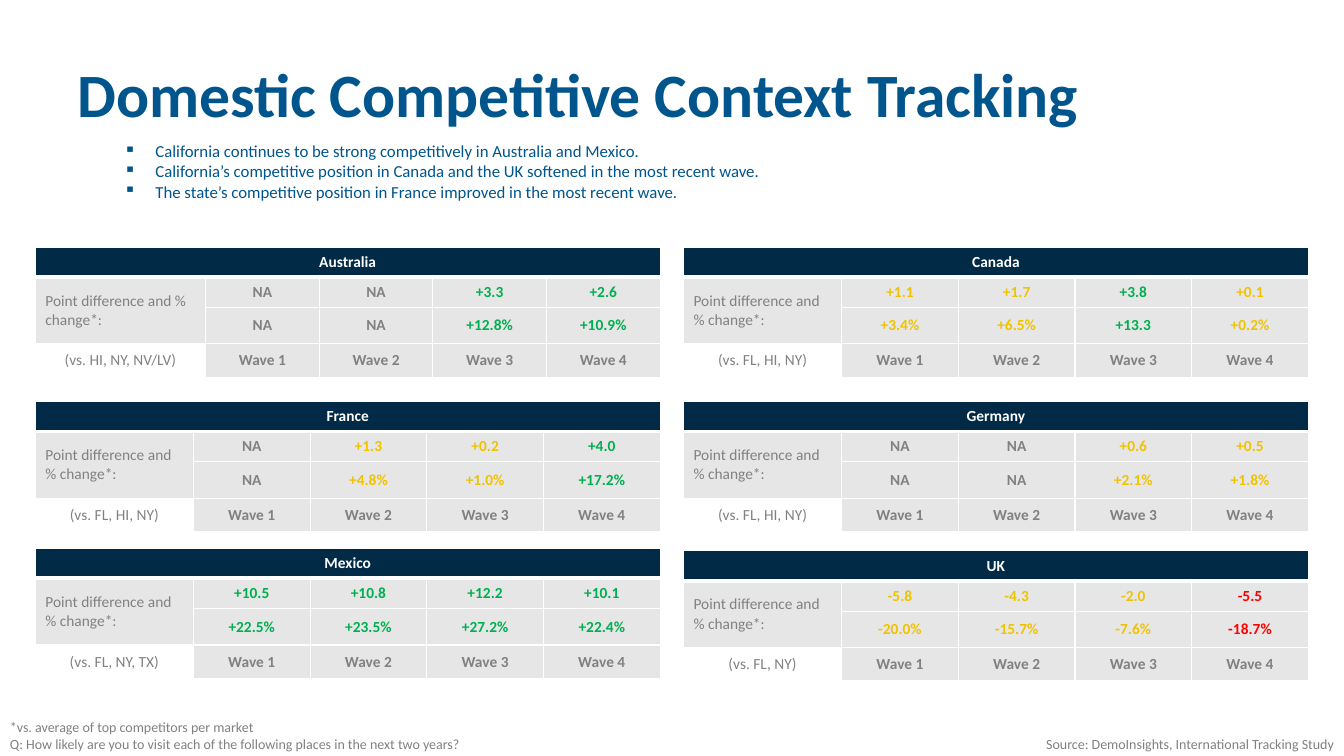
from dataclasses import dataclass

from lxml.etree import SubElement
from pptx import Presentation
from pptx.dml.color import RGBColor
from pptx.enum.text import MSO_ANCHOR, PP_ALIGN
from pptx.oxml.ns import qn
from pptx.slide import Slide
from pptx.table import _Cell
from pptx.text.text import TextFrame, _Paragraph
from pptx.util import Pt


@dataclass(frozen=True)
class Theme:
    font: str = "Calibri"
    blue: str = "00558C"
    navy: str = "002A46"
    gray: str = "808180"
    pale: str = "E6E6E6"
    white: str = "FFFFFF"
    green: str = "00B050"
    gold: str = "F0C300"
    red: str = "FF0000"
    title: float = 44
    point: float = 12
    cell: float = 11
    note: float = 10


@dataclass(frozen=True)
class Market:
    name: str
    left: float
    top: float
    rivals: str
    points: list[str]
    shares: list[str]
    tones: list[str]
    label: float = 113


@dataclass(frozen=True)
class Block:
    left: float
    top: float
    width: float
    height: float
    lines: list[str]
    size: float
    color: str
    bold: bool = False
    align: PP_ALIGN = PP_ALIGN.LEFT
    bullet: str = ""
    pitch: float = 0


THEME = Theme()
GRAY, GREEN, GOLD, RED = THEME.gray, THEME.green, THEME.gold, THEME.red
WIDTH = 446.4
ROWS = [21.6, 21.6, 26, 24]
WAVES = [f"Wave {n}" for n in range(1, 5)]
WEST, EAST = 25.2, 488.2
INDENT = 22.5

MARKETS = [
    Market("Australia", WEST, 176.4, "(vs. HI, NY, NV/LV)",
           ["NA", "NA", "+3.3", "+2.6"], ["NA", "NA", "+12.8%", "+10.9%"],
           [GRAY, GRAY, GREEN, GREEN], label=121.7),
    Market("Canada", EAST, 176.4, "(vs. FL, HI, NY)",
           ["+1.1", "+1.7", "+3.8", "+0.1"], ["+3.4%", "+6.5%", "+13.3", "+0.2%"],
           [GOLD, GOLD, GREEN, GOLD]),
    Market("France", WEST, 286.6, "(vs. FL, HI, NY)",
           ["NA", "+1.3", "+0.2", "+4.0"], ["NA", "+4.8%", "+1.0%", "+17.2%"],
           [GRAY, GOLD, GOLD, GREEN]),
    Market("Germany", EAST, 286.6, "(vs. FL, HI, NY)",
           ["NA", "NA", "+0.6", "+0.5"], ["NA", "NA", "+2.1%", "+1.8%"],
           [GRAY, GRAY, GOLD, GOLD]),
    Market("Mexico", WEST, 391.5, "(vs. FL, NY, TX)",
           ["+10.5", "+10.8", "+12.2", "+10.1"],
           ["+22.5%", "+23.5%", "+27.2%", "+22.4%"], [GREEN] * 4),
    Market("UK", EAST, 393.3, "(vs. FL, NY)",
           ["-5.8", "-4.3", "-2.0", "-5.5"],
           ["-20.0%", "-15.7%", "-7.6%", "-18.7%"], [GOLD, GOLD, GOLD, RED]),
]

BLOCKS = [
    Block(48.2, 38.9, 864.7, 141.8, ["Domestic Competitive Context Tracking"],
          THEME.title, THEME.blue, bold=True, pitch=50),
    Block(81.4, 97.2, 817.9, 65.5, [
        "California continues to be strong competitively in Australia and Mexico.",
        "California’s competitive position in Canada and the UK softened in the most recent wave.",
        "The state’s competitive position in France improved in the most recent wave.",
    ], THEME.point, THEME.blue, bullet="▪"),
    Block(0, 509.8, 388, 30, [
        "*vs. average of top competitors per market",
        "Q: How likely are you to visit each of the following places in the next two years?",
    ], THEME.note, GRAY),
    Block(532.8, 522, 427, 18, ["Source: DemoInsights, International Tracking Study"],
          THEME.note, GRAY, align=PP_ALIGN.RIGHT),
]


def style(frame: TextFrame, size: float, color: str, bold: bool, align: PP_ALIGN) -> None:
    for para in frame.paragraphs:
        para.alignment = align
        for run in para.runs:
            font = run.font
            font.name, font.size, font.bold = THEME.font, Pt(size), bold
            font.color.rgb = RGBColor.from_string(color)


def mark(para: _Paragraph, sign: str) -> None:
    """Give the paragraph a hanging bullet."""
    props = para._p.get_or_add_pPr()
    props.set("marL", str(Pt(INDENT)))
    props.set("indent", str(-Pt(INDENT)))
    SubElement(props, qn("a:buChar"), char=sign)


def write(slide: Slide, block: Block) -> None:
    box = slide.shapes.add_textbox(
        Pt(block.left), Pt(block.top), Pt(block.width), Pt(block.height))
    frame = box.text_frame
    frame.word_wrap = True
    frame.text = "\n".join(block.lines)
    style(frame, block.size, block.color, block.bold, block.align)
    for para in frame.paragraphs:
        if block.pitch:
            para.line_spacing = Pt(block.pitch)
        if block.bullet:
            mark(para, block.bullet)


def edge(cell: _Cell, row: int) -> None:
    """Draw white borders, thick between the header and the body."""
    props = cell._tc.get_or_add_tcPr()
    thick = {"T": 3 if row == 1 else 1, "B": 3 if row == 0 else 1}
    for side in "LRTB":
        line = SubElement(props, qn(f"a:ln{side}"), w=str(Pt(thick.get(side, 1))))
        fill = SubElement(line, qn("a:solidFill"))
        SubElement(fill, qn("a:srgbClr"), val=THEME.white)


def tint(row: int, col: int, market: Market) -> str:
    """Pick the text colour of a cell."""
    if row == 0:
        return THEME.white
    return market.tones[col - 1] if col and row < 3 else GRAY


def chart(slide: Slide, market: Market) -> None:
    """Add the table of one market."""
    grid = [
        [market.name, "", "", "", ""],
        ["Point difference and % change*:", *market.points],
        ["", *market.shares],
        [market.rivals, *WAVES],
    ]
    table = slide.shapes.add_table(
        len(grid), len(grid[0]), Pt(market.left), Pt(market.top),
        Pt(WIDTH), Pt(sum(ROWS))).table
    table.first_row = table.horz_banding = False
    for row, height in enumerate(ROWS):
        table.rows[row].height = Pt(height)
    wave = (WIDTH - market.label) / len(WAVES)
    for col, width in enumerate([market.label] + [wave] * len(WAVES)):
        table.columns[col].width = Pt(width)
    for row, texts in enumerate(grid):
        for col, text in enumerate(texts):
            cell = table.cell(row, col)
            edge(cell, row)
            if (row, col) == (3, 0):
                cell.fill.background()
            else:
                cell.fill.solid()
                cell.fill.fore_color.rgb = RGBColor.from_string(
                    THEME.pale if row else THEME.navy)
            cell.vertical_anchor = MSO_ANCHOR.MIDDLE
            cell.text_frame.text = text
            align = PP_ALIGN.LEFT if (row, col) == (1, 0) else PP_ALIGN.CENTER
            style(cell.text_frame, THEME.cell, tint(row, col, market),
                  row == 0 or col > 0, align)
    table.cell(0, 0).merge(table.cell(0, len(WAVES)))
    table.cell(1, 0).merge(table.cell(2, 0))


def main() -> None:
    deck = Presentation()
    deck.slide_width, deck.slide_height = Pt(960), Pt(540)
    slide = deck.slides.add_slide(deck.slide_layouts[6])
    for block in BLOCKS:
        write(slide, block)
    for market in MARKETS:
        chart(slide, market)
    deck.save("out.pptx")


if __name__ == "__main__":
    main()
